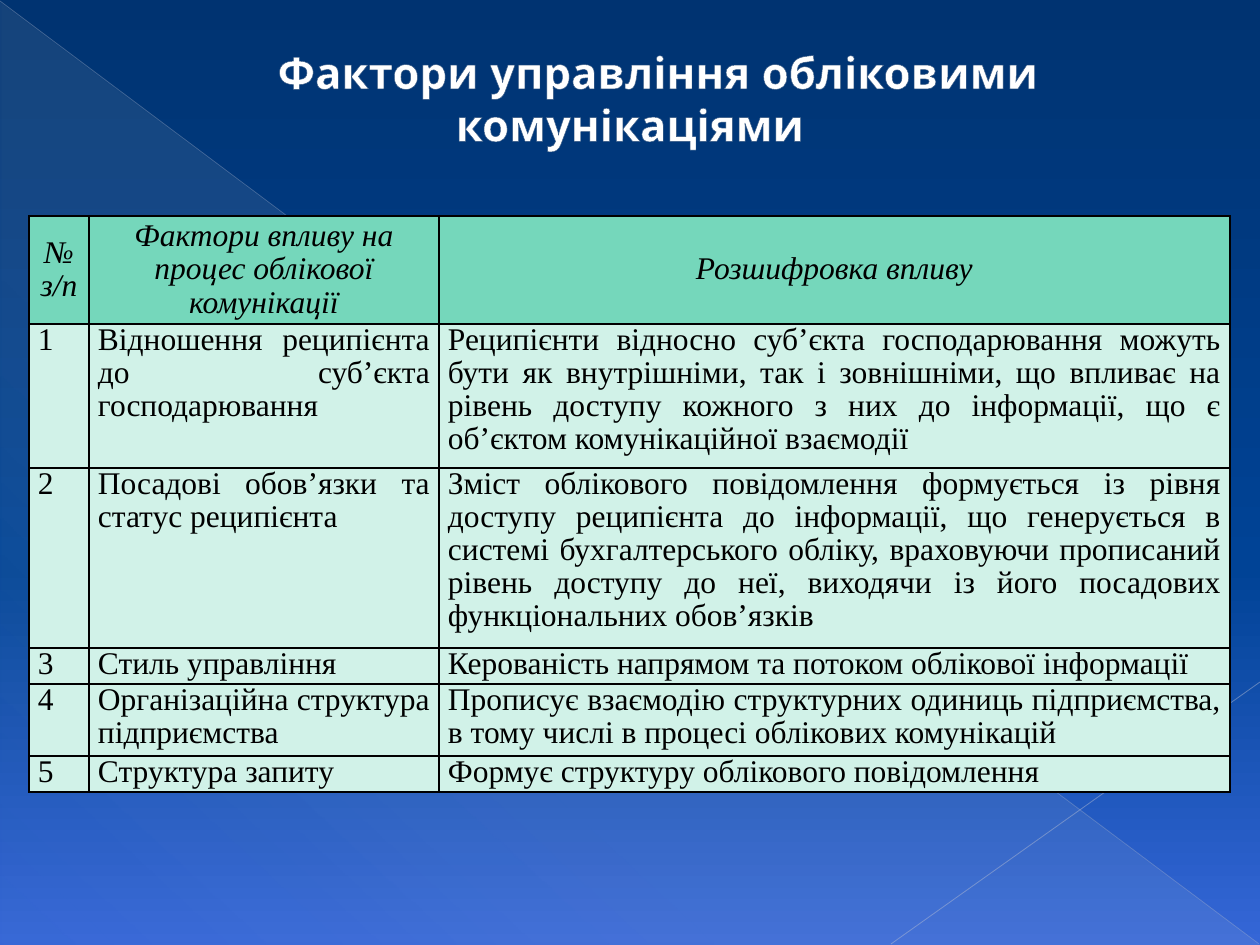
"""Build a slide with a table of factors in managing accounting communications."""
from lxml import etree
from pptx import Presentation
from pptx import util as u
from pptx.dml.color import RGBColor
from pptx.enum import shapes, text
from pptx.oxml import parse_xml
from pptx.oxml.ns import nsdecls, qn

PX = 914400 / 126
COLORS = {
    "top": "003371", "middle": "004396", "bottom": "3566D7", "veil": "EEECE1",
    "diagonal": "ADB6CE", "corner": "B6BED3", "title": "FFFFFF", "outline": "375983",
    "ink": "000000", "head": "75D7BB", "body": "D1F2E8",
}
FONT = "Times New Roman"


def gradient(stops, angle):
    gs = "".join(
        f'<a:gs pos="{pos * 1000}"><a:srgbClr val="{COLORS[name]}">'
        f'<a:alpha val="{alpha * 1000}"/></a:srgbClr></a:gs>'
        for pos, name, alpha in stops)
    return parse_xml(f'<a:gradFill {nsdecls("a")} rotWithShape="1"><a:gsLst>{gs}</a:gsLst>'
                     f'<a:lin ang="{angle * 60000}" scaled="0"/></a:gradFill>')


def write(p, content, size=18, font=FONT, color="ink", bold=False, italic=False,
          align=text.PP_ALIGN.CENTER, spacing=None):
    p.alignment = align
    p.line_spacing = spacing
    r = p.add_run()
    r.text = content
    r.font.size, r.font.name = u.Pt(size), font
    r.font.bold, r.font.italic = bold, italic
    r.font.color.rgb = RGBColor.from_string(COLORS[color])
    return r


prs = Presentation()
prs.slide_width, prs.slide_height = u.Inches(10), u.Inches(7.5)
s = prs.slides.add_slide(prs.slide_layouts[6])

s.background.fill.solid()
bg = s._element.find(".//" + qn("p:bgPr"))
bg.replace(bg[0], gradient([(0, "top", 100), (60, "middle", 100), (100, "bottom", 100)], 90))

box = [round(v * PX) for v in (1, 2, 1259, 943)]
sp = s.shapes.add_shape(shapes.MSO_SHAPE.RIGHT_TRIANGLE, *box)
sp.shadow.inherit = False
sp.line.fill.background()
sp.fill.solid()
pr = sp._element.spPr
pr.replace(pr.find(qn("a:solidFill")),
           gradient([(0, "veil", 10), (70, "veil", 8), (100, "veil", 1)], 133))

for ends, color, width, alpha in [((0, 1, 1259, 944), "diagonal", 0.39, 35),
                                  ((1260, 682, 891, 944), "corner", 0.47, 45)]:
    line = s.shapes.add_connector(shapes.MSO_CONNECTOR.STRAIGHT, *[round(v * PX) for v in ends])
    line.line.width = u.Pt(width)
    line.line.color.rgb = RGBColor.from_string(COLORS[color])
    pr = line._element.spPr
    etree.SubElement(pr.find(".//" + qn("a:srgbClr")), qn("a:alpha"), val=str(alpha * 1000))
    etree.SubElement(pr, qn("a:effectLst"))

title = s.shapes.add_textbox(*[round(v * PX) for v in (93, 39, 1074, 118)])
tf = title.text_frame
tf.word_wrap = True
tf.auto_size = text.MSO_AUTO_SIZE.SHAPE_TO_FIT_TEXT
p = tf.paragraphs[0]
r = write(p, "Фактори управління обліковими комунікаціями", size=25,
          font="League Spartan", color="title", bold=True)
p._p.get_or_add_pPr().set("indent", str(round(56 * PX)))
r._r.get_or_add_rPr().insert(0, parse_xml(
    f'<a:ln {nsdecls("a")} w="6350"><a:solidFill><a:srgbClr val="{COLORS["outline"]}"/>'
    '</a:solidFill></a:ln>'))

rows = [
    ("№\nз/п", "Фактори впливу на процес облікової комунікації", "Розшифровка впливу"),
    ("1", "Відношення реципієнта до суб’єкта господарювання",
     "Реципієнти відносно суб’єкта господарювання можуть бути як внутрішніми, так і "
     "зовнішніми, що впливає на рівень доступу кожного з них до інформації, що є "
     "об’єктом комунікаційної взаємодії"),
    ("2", "Посадові обов’язки та статус реципієнта",
     "Зміст облікового повідомлення формується із рівня доступу реципієнта до інформації, "
     "що генерується в системі бухгалтерського обліку, враховуючи прописаний рівень доступу "
     "до неї, виходячи із його посадових функціональних обов’язків"),
    ("3", "Стиль управління", "Керованість напрямом та потоком облікової інформації"),
    ("4", "Організаційна структура підприємства",
     "Прописує взаємодію структурних одиниць підприємства, в тому числі в процесі "
     "облікових комунікацій"),
    ("5", "Структура запиту", "Формує структуру облікового повідомлення"),
]
widths = [60, 350, 791]
heights = [108, 144, 180, 36, 72, 36]
box = [round(v * PX) for v in (29, 216, sum(widths), sum(heights))]
table = s.shapes.add_table(len(rows), len(widths), *box).table
table.first_row = table.horz_banding = False
for column, width in zip(table.columns, widths):
    column.width = round(width * PX)
for i, (row, height) in enumerate(zip(rows, heights)):
    table.rows[i].height = round(height * PX)
    head = i == 0
    for j, content in enumerate(row):
        cell = table.cell(i, j)
        cell.margin_left = cell.margin_right = round(9 * PX)
        cell.margin_top = cell.margin_bottom = 0
        cell.vertical_anchor = text.MSO_ANCHOR.MIDDLE if head else text.MSO_ANCHOR.TOP
        for side in "LRTB":
            cell._tc.get_or_add_tcPr().append(parse_xml(
                f'<a:ln{side} {nsdecls("a")} w="12700"><a:solidFill>'
                f'<a:srgbClr val="{COLORS["ink"]}"/></a:solidFill></a:ln{side}>'))
        cell.fill.solid()
        cell.fill.fore_color.rgb = RGBColor.from_string(COLORS["head" if head else "body"])
        tf = cell.text_frame
        for k, part in enumerate(content.split("\n")):
            p = tf.add_paragraph() if k else tf.paragraphs[0]
            write(p, part, italic=head, spacing=0.95,
                  align=text.PP_ALIGN.CENTER if head else text.PP_ALIGN.JUSTIFY)

prs.save("out.pptx")
